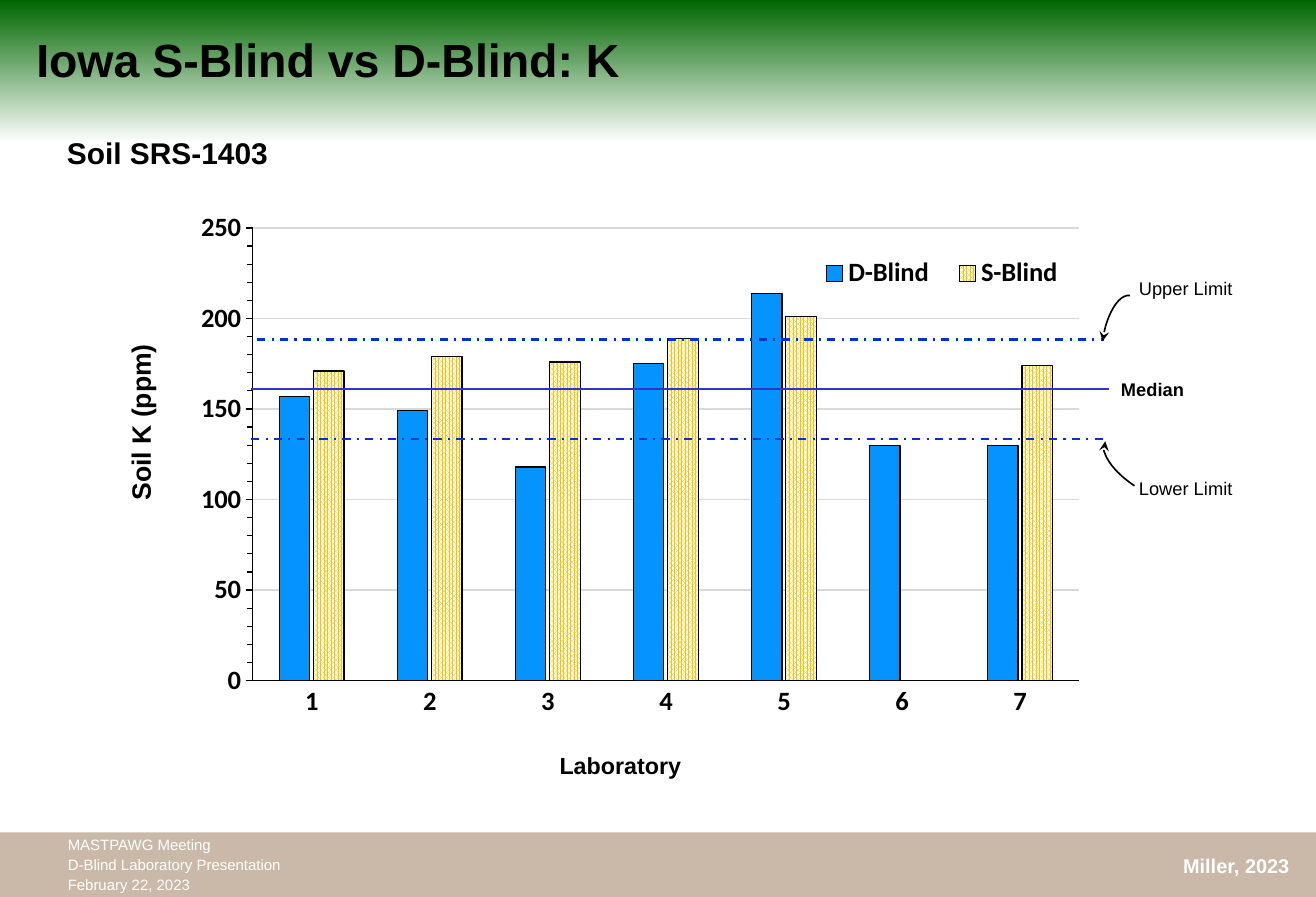
from collections import namedtuple

from lxml import etree
from pptx import Presentation
from pptx import util as u
from pptx.chart.data import CategoryChartData
from pptx.dml.color import RGBColor
from pptx.enum import chart as ch, dml, shapes, text
from pptx.oxml import parse_xml
from pptx.oxml.ns import nsdecls, qn

Box = namedtuple("Box", "left top width height")
BLACK, WHITE = "000000", "FFFFFF"


def rgb(value):
    """Return a colour from a hex string."""
    return RGBColor.from_string(value)


def within(box, left, top, width, height):
    """Return slide lengths for a part measured in cm from a box's corner."""
    return [u.Cm(n) for n in (box.left + left, box.top + top, width, height)]


def set_font(font, size, color=BLACK, bold=False, name="Arial"):
    """Style one font."""
    font.name, font.size, font.bold = name, u.Pt(size), bold
    font.color.rgb = rgb(color)


def set_line(line, color, width):
    """Colour and size one line."""
    line.color.rgb, line.width = rgb(color), u.Pt(width)


def add_label(slide, place, lines, size, color=BLACK, bold=False, spacing=None):
    """Add an unwrapped text box and return it."""
    label = slide.shapes.add_textbox(*place)
    frame = label.text_frame
    frame.text = lines
    frame.word_wrap = False
    frame.auto_size = text.MSO_AUTO_SIZE.SHAPE_TO_FIT_TEXT
    for paragraph in frame.paragraphs:
        set_font(paragraph.font, size, color, bold)
        if spacing:
            paragraph.line_spacing = u.Pt(spacing)
    return label


def set_layout(parent, index, left, top, width, height, inner=False):
    """Give a chart part a fixed place as fractions of the chart."""
    for old in parent.findall(qn("c:layout")):
        parent.remove(old)
    target = '<c:layoutTarget val="inner"/>' if inner else ""
    parent.insert(index, parse_xml(
        f'<c:layout {nsdecls("c")}><c:manualLayout>{target}'
        '<c:xMode val="edge"/><c:yMode val="edge"/>'
        f'<c:x val="{left}"/><c:y val="{top}"/><c:w val="{width}"/><c:h val="{height}"/>'
        '</c:manualLayout></c:layout>'))


def add_background(slide):
    """Fade the slide from green at the top to white."""
    fill = slide.background.fill
    fill.gradient()
    fill.gradient_angle = 270
    for stop, color, position in zip(fill.gradient_stops, ("006600", WHITE), (0, 0.16)):
        stop.color.rgb, stop.position = rgb(color), position


def add_heading(slide, box):
    """Add the title and the soil name."""
    title = add_label(slide, within(box, 0.43, 0.13, 13.34, 2.24),
                      "Iowa S-Blind vs D-Blind: K ", 28, bold=True)
    frame = title.text_frame
    frame.auto_size = text.MSO_AUTO_SIZE.NONE
    frame.word_wrap = True
    frame.vertical_anchor = text.MSO_ANCHOR.MIDDLE
    frame.paragraphs[0].alignment = text.PP_ALIGN.CENTER
    add_label(slide, within(box, 1.17, 2.74, 4.83, 1.02), "Soil SRS-1403", 18, bold=True)


def add_potassium_chart(slide, box):
    """Add the column chart with its axis titles."""
    data = CategoryChartData()
    data.categories = [str(lab) for lab in range(1, 8)]
    data.add_series("D-Blind", (157, 149, 118, 175, 214, 130, 130))
    data.add_series("S-Blind", (171, 179, 176, 189, 201, None, 174))
    chart = slide.shapes.add_chart(ch.XL_CHART_TYPE.COLUMN_CLUSTERED,
                                   *within(box, 0, 0, box.width, box.height), data).chart
    chart.has_title = False
    set_font(chart.font, 16, bold=True, name="Calibri")

    plot = chart.plots[0]
    plot.gap_width, plot.overlap, plot.vary_by_categories = 176, -13, False
    d_blind, s_blind = plot.series
    d_blind.format.fill.solid()
    d_blind.format.fill.fore_color.rgb = rgb("0594FF")
    pattern = s_blind.format.fill
    pattern.patterned()
    pattern.pattern = dml.MSO_PATTERN.PERCENT_80
    pattern.fore_color.rgb, pattern.back_color.rgb = rgb("FFC000"), rgb(WHITE)
    for series in plot.series:
        set_line(series.format.line, BLACK, 0.75)

    labs, ppm = chart.category_axis, chart.value_axis
    labs.major_tick_mark = ch.XL_TICK_MARK.NONE
    set_line(labs.format.line, BLACK, 1)
    ppm.minimum_scale, ppm.maximum_scale = 0, 250
    ppm.major_unit, ppm.minor_unit = 50, 10
    ppm.major_tick_mark = ppm.minor_tick_mark = ch.XL_TICK_MARK.OUTSIDE
    set_line(ppm.format.line, BLACK, 0.75)
    set_line(ppm.major_gridlines.format.line, "D9D9D9", 0.75)
    for axis in (labs, ppm):
        set_font(axis.tick_labels.font, 16, bold=True, name="Calibri")

    chart.has_legend = True
    legend = chart.legend
    legend.position = ch.XL_LEGEND_POSITION.BOTTOM
    legend.include_in_layout = False
    set_font(legend.font, 16, bold=True, name="Calibri")
    set_layout(legend._element, 1, 0.68, 0.06, 0.3, 0.09)
    set_layout(chart._chartSpace.chart.plotArea, 0, 0.076, 0.023, 0.904, 0.819, inner=True)

    soil = add_label(slide, within(box, -2.85, 3.96, 3.89, 0.94), "Soil K (ppm)", 16, bold=True)
    soil.rotation = 270
    add_label(slide, within(box, 7.74, 11.32, 3.1, 0.86), "Laboratory", 14, bold=True)


def add_limits(slide, box):
    """Add the median and limit lines, their labels and the curved arrows."""
    for start, end, level, color, width, dashed in (
            (1.44, 19.66, 3.76, "3333CC", 1.5, False),
            (1.44, 19.61, 4.82, "0033CC", 1.25, True),
            (1.57, 19.55, 2.71, "0033CC", 1.25, True)):
        left, top, length, _ = within(box, start, level, end - start, 0)
        limit = slide.shapes.add_connector(shapes.MSO_CONNECTOR.STRAIGHT,
                                           left, top, left + length, top)
        set_line(limit.line, color, width)
        if dashed:
            limit.line.dash_style = dml.MSO_LINE.DASH_DOT
        etree.SubElement(limit._element.spPr, qn("a:effectLst"))

    for name, left, top, width, bold in (("Median", 19.66, 3.4, 1.85, True),
                                         ("Upper Limit", 20.04, 1.27, 2.51, False),
                                         ("Lower Limit", 20.04, 5.51, 2.51, False)):
        add_label(slide, within(box, left, top, width, 0.74), name, 11, bold=bold)

    for left, top, angle, tip in ((18.92, 2.36, 277.7, "a:headEnd"),
                                  (19.4, 5, 213.6, "a:tailEnd")):
        arc = slide.shapes.add_shape(shapes.MSO_SHAPE.ARC, *within(box, left, top, 2.08, 0.89))
        arc.rotation = angle
        arc.shadow.inherit = False
        arc.fill.background()
        set_line(arc.line, BLACK, 1)
        etree.SubElement(arc.line._get_or_add_ln(), qn(tip), type="stealth")


def add_footer(slide, box):
    """Add the brown band with the meeting and the author."""
    band = slide.shapes.add_shape(shapes.MSO_SHAPE.RECTANGLE,
                                  *within(box, 0, 0, box.width, box.height))
    band.shadow.inherit = False
    band.line.fill.background()
    band.fill.solid()
    band.fill.fore_color.rgb = rgb("663300")
    shade = band._element.spPr.find(qn("a:solidFill"))[0]
    etree.SubElement(shade, qn("a:alpha"), val="34000")
    add_label(slide, within(box, 24.87, 0.33, 2.79, 0.76), "Miller, 2023", 12, WHITE, True)
    add_label(slide, within(box, 1.19, -0.1, 5.26, 1.55),
              "MASTPAWG Meeting\nD-Blind Laboratory Presentation\nFebruary 22, 2023",
              9, WHITE, spacing=12)


def main():
    """Build and save the slide."""
    deck = Presentation()
    deck.slide_width, deck.slide_height = u.Cm(27.94), u.Cm(19.05)
    slide = deck.slides.add_slide(deck.slide_layouts[6])
    results = Box(3.89, 4.5, 19.41, 11.81)
    add_background(slide)
    add_heading(slide, Box(0, 0, 27.94, 3.76))
    add_potassium_chart(slide, results)
    add_limits(slide, results)
    add_footer(slide, Box(0, 17.68, 27.94, 1.37))
    deck.save("out.pptx")


if __name__ == "__main__":
    main()
